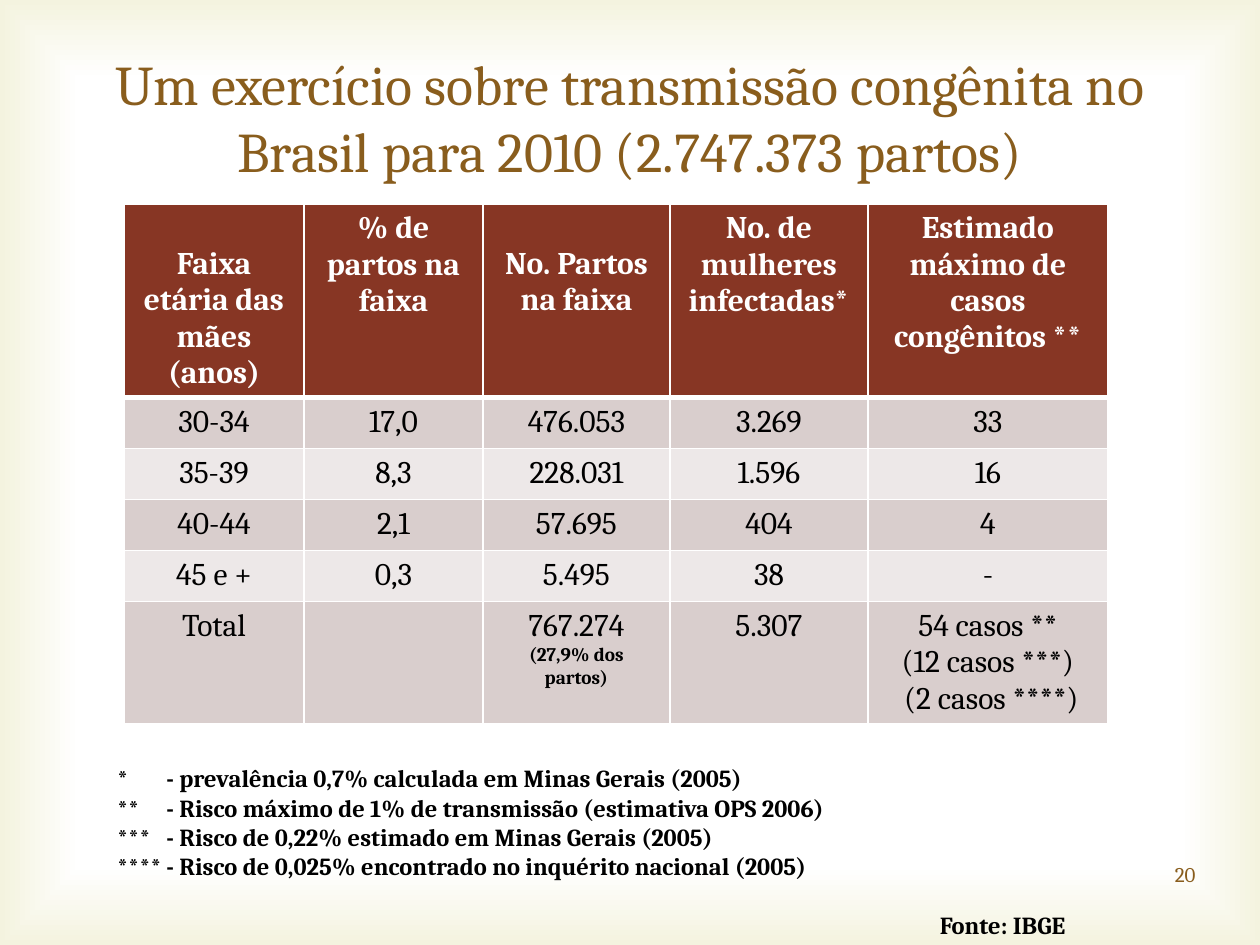
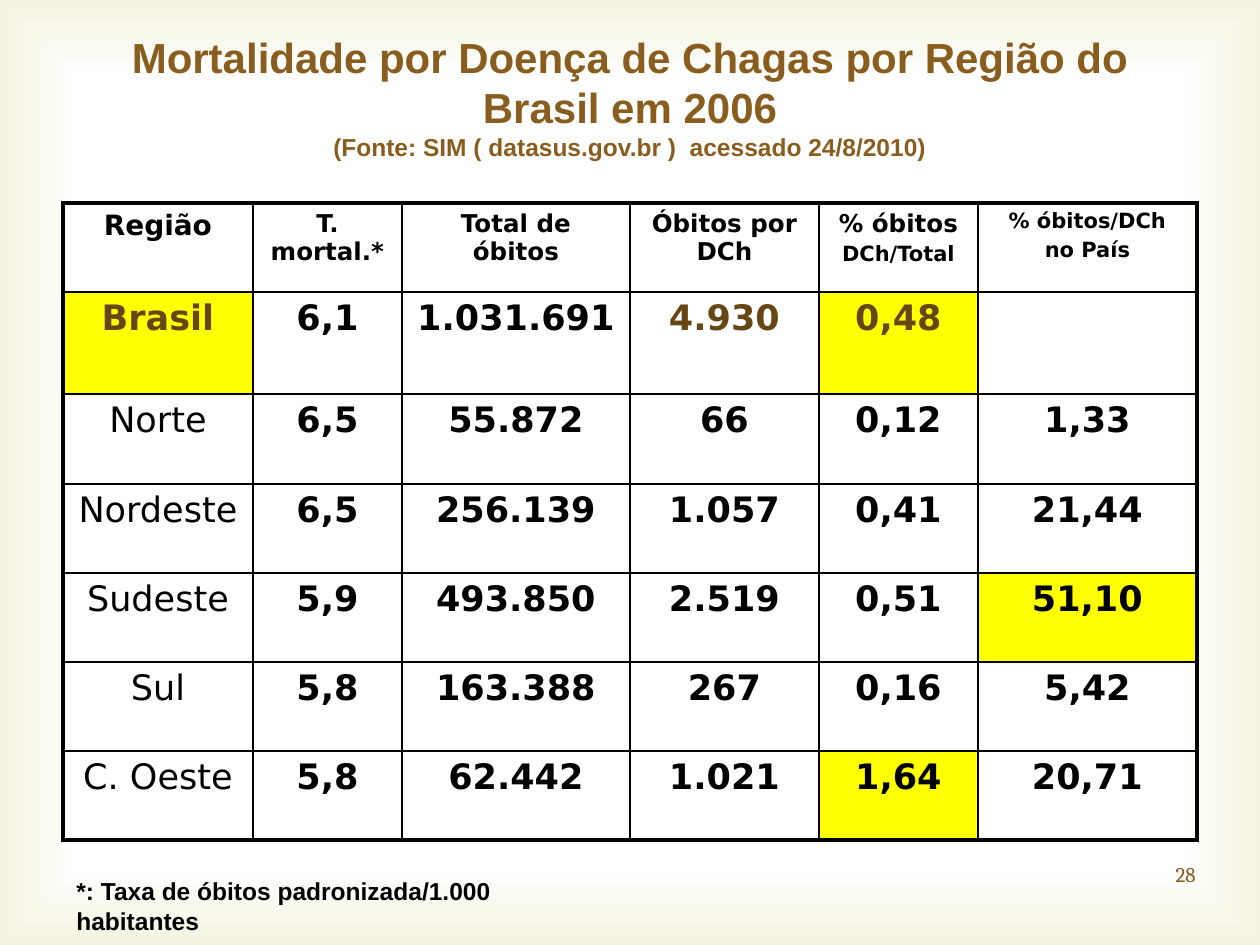
from lxml import etree
from pptx import Presentation
from pptx.dml.color import RGBColor
from pptx.enum.text import MSO_ANCHOR, MSO_AUTO_SIZE, PP_ALIGN
from pptx.oxml.ns import qn
from pptx.util import Emu, Pt

LEFT, CENTER, RIGHT = PP_ALIGN.LEFT, PP_ALIGN.CENTER, PP_ALIGN.RIGHT
TOP, MIDDLE = MSO_ANCHOR.TOP, MSO_ANCHOR.MIDDLE
NO_FIT = MSO_AUTO_SIZE.NONE

# Shared look
PX = 914400 / 126
SERIF, SANS, WIDE = "Cambria", "Arial", "DejaVu Sans"
BLACK, WHITE, GOLD, BROWN = "000000", "FFFFFF", "895D1D", "674616"
CREAM, RUST, YELLOW = "F4F3DF", "873624", "FFFF00"
BANDS = ["EDE8E8", "D9CECD"]

# Slide 1: congenital transmission; each cell lists its lines
BIRTHS = {
    "title": [("Um exercício sobre transmissão congênita no Brasil "
               "para 2010 (2.747.373 partos)", 32)],
    "cols": [180, 179, 187, 198, 240],
    "rows": [193, 51, 51, 51, 51, 121],
    "cells": [
        ["Faixa etária das mães\n(anos)", "% de partos na\nfaixa",
         "No. Partos\nna faixa", "No. de mulheres\ninfectadas*",
         "Estimado máximo de casos congênitos **"],
        ["30-34", "17,0", "476.053", "3.269", "33"],
        ["35-39", "8,3", "228.031", "1.596", "16"],
        ["40-44", "2,1", "57.695", "404", "4"],
        ["45 e +", "0,3", "5.495", "38", "-"],
        ["Total", "", "767.274\n(27,9% dos partos)", "5.307",
         "54 casos **\n(12 casos ***)\n (2 casos ****)"],
    ],
    "low": [(0, 0), (0, 2)],
    "notes": [
        ("*", "prevalência 0,7% calculada em Minas Gerais (2005)"),
        ("**", "Risco máximo de 1% de transmissão (estimativa OPS 2006)"),
        ("***", "Risco de 0,22% estimado em Minas Gerais (2005)"),
        ("****", "Risco de 0,025% encontrado no inquérito nacional (2005)"),
    ],
    "source": "Fonte: IBGE",
}

# Slide 2: mortality by region
DEATHS = {
    "title": [("Mortalidade por Doença de Chagas por Região do Brasil em 2006", 24),
              ("(Fonte: SIM ( datasus.gov.br )  acessado 24/8/2010)", 14)],
    "cols": [190, 149, 228, 189, 159, 219],
    "rows": [89, 102, 90, 89, 89, 89, 89],
    "cells": [
        ["Região", "T. mortal.*", "Total de óbitos", "Óbitos por DCh",
         "% óbitos\nDCh/Total", "% óbitos/DCh\nno País"],
        ["Brasil", "6,1", "1.031.691", "4.930", "0,48", ""],
        ["Norte", "6,5", "55.872", "66", "0,12", "1,33"],
        ["Nordeste", "6,5", "256.139", "1.057", "0,41", "21,44"],
        ["Sudeste", "5,9", "493.850", "2.519", "0,51", "51,10"],
        ["Sul", "5,8", "163.388", "267", "0,16", "5,42"],
        ["C. Oeste", "5,8", "62.442", "1.021", "1,64", "20,71"],
    ],
    "heads": [[16], [14], [14], [14], [14, 12], [12, 12]],
    "marked": [(1, 0), (1, 4), (4, 5), (6, 4)],
    "brown": [(1, 0), (1, 3), (1, 4)],
    "note": "*: Taxa de óbitos padronizada/1.000 habitantes",
}


def px(n):
    return Emu(round(n * PX))


def rgb(code):
    return RGBColor.from_string(code)


def add_run(para, text, size, face, color, bold=False):
    run = para.add_run()
    run.text = text
    font = run.font
    font.size, font.name, font.bold = Pt(size), face, bold
    font.color.rgb = rgb(color)


def next_para(frame, first, align):
    para = frame.paragraphs[0] if first else frame.add_paragraph()
    para.alignment = align
    return para


def set_title(slide, top, parts, face, bold):
    title = slide.shapes.title
    title.left, title.top, title.width, title.height = map(px, (63, top, 1134, 157))
    frame = title.text_frame
    frame.word_wrap, frame.auto_size = True, NO_FIT
    frame.vertical_anchor = MIDDLE
    para = next_para(frame, True, CENTER)
    for i, (text, size) in enumerate(parts):
        if i:
            para.add_line_break()
        add_run(para, text, size, face, GOLD, bold)


def add_box(slide, x, y, w, h, anchor=TOP):
    frame = slide.shapes.add_textbox(px(x), px(y), px(w), px(h)).text_frame
    frame.word_wrap, frame.vertical_anchor = True, anchor
    return frame


def add_number(slide, text):
    frame = add_box(slide, 915, 849, 293, 50, MIDDLE)
    add_run(next_para(frame, True, RIGHT), text, 12, SERIF, GOLD)


def set_edges(cell, color, widths):
    props = cell._tc.get_or_add_tcPr()
    for side in "LRTB":
        line = etree.SubElement(props, qn("a:ln" + side), w=str(Pt(widths[side])))
        fill = etree.SubElement(line, qn("a:solidFill"))
        etree.SubElement(fill, qn("a:srgbClr"), val=color)


def add_grid(slide, x, y, data, face, look, edges, edge_color, gap=0):
    """look(row, col, line) gives size, bold and colour; edges(row, col) the widths."""
    cells, cols, rows = data["cells"], data["cols"], data["rows"]
    table = slide.shapes.add_table(len(rows), len(cols), px(x), px(y),
                                   px(sum(cols)), px(sum(rows))).table
    table.first_row = table.horz_banding = False
    for col, w in zip(table.columns, cols):
        col.width = px(w)
    for row, h in zip(table.rows, rows):
        row.height = px(h)
    for r, line in enumerate(cells):
        for c, text in enumerate(line):
            cell = table.cell(r, c)
            set_edges(cell, edge_color, edges(r, c))
            cell.fill.background()
            if not text:
                continue
            for i, part in enumerate(text.split("\n")):
                para = next_para(cell.text_frame, i == 0, CENTER)
                if i:
                    para.space_before = Pt(gap)
                size, bold, color = look(r, c, i)
                add_run(para, part, size, face, color, bold)
    return table


def paint(cell, color):
    cell.fill.solid()
    cell.fill.fore_color.rgb = rgb(color)


def set_back(master):
    fill = master.background.fill
    fill.gradient()
    for stop, color, pos in zip(fill.gradient_stops, (WHITE, CREAM), (0.83, 1)):
        stop.color.rgb, stop.position = rgb(color), pos
    grad = master.element.find(".//" + qn("a:gradFill"))
    grad.remove(grad.find(qn("a:lin")))
    shade = etree.Element(qn("a:path"))
    shade.set("path", "rect")
    etree.SubElement(shade, qn("a:fillToRect"), dict.fromkeys("ltrb", "50000"))
    grad.find(qn("a:gsLst")).addnext(shade)


def births_slide(slide):
    data = BIRTHS
    set_title(slide, 38, data["title"], SERIF, False)

    def look(r, c, i):
        if r == 0:
            return 18, True, WHITE
        small = (r, c, i) == (5, 2, 1)
        return (11 if small else 18), small, BLACK

    def edges(r, c):
        return {"L": 1, "R": 1, "T": 3 if r == 1 else 1, "B": 3 if r == 0 else 1}

    table = add_grid(slide, 124, 204, data, SERIF, look, edges, WHITE)
    for r in range(len(data["rows"])):
        for c in range(len(data["cols"])):
            paint(table.cell(r, c), BANDS[r % 2] if r else RUST)
    for spot in data["low"]:
        table.cell(*spot).margin_top = px(42)

    # Notes with a hanging indent
    frame = add_box(slide, 105, 757, 973, 190)
    for i, (mark, text) in enumerate(data["notes"]):
        para = next_para(frame, i == 0, LEFT)
        props = para._p.get_or_add_pPr()
        props.set("marL", str(px(49)))
        props.set("indent", str(-px(49)))
        add_run(para, f"{mark}\t- {text}", 14, SERIF, BLACK, True)
    para = next_para(frame, False, RIGHT)
    para.space_before = Pt(16.5)
    add_run(para, data["source"], 14, SERIF, BLACK, True)
    add_number(slide, "20")


def deaths_slide(slide):
    data = DEATHS
    set_title(slide, 18, data["title"], SANS, True)
    last_row, last_col = len(data["rows"]) - 1, len(data["cols"]) - 1

    def look(r, c, i):
        if r == 0:
            return data["heads"][c][i], True, BLACK
        return 20, r == 1 or c > 0, BROWN if (r, c) in data["brown"] else BLACK

    def edges(r, c):
        outer = {"L": c == 0, "R": c == last_col, "T": r == 0, "B": r == last_row}
        return {side: 2.25 if out else 1 for side, out in outer.items()}

    table = add_grid(slide, 63, 203, data, WIDE, look, edges, BLACK, 2.5)
    for spot in data["marked"]:
        paint(table.cell(*spot), YELLOW)

    frame = add_box(slide, 64, 870, 540, 72)
    add_run(next_para(frame, True, LEFT), data["note"], 14, SANS, BLACK, True)
    add_number(slide, "28")


def main():
    prs = Presentation()
    prs.slide_width, prs.slide_height = px(1260), px(945)
    set_back(prs.slide_master)
    for build in (births_slide, deaths_slide):
        build(prs.slides.add_slide(prs.slide_layouts[5]))
    prs.save("out.pptx")


if __name__ == "__main__":
    main()
